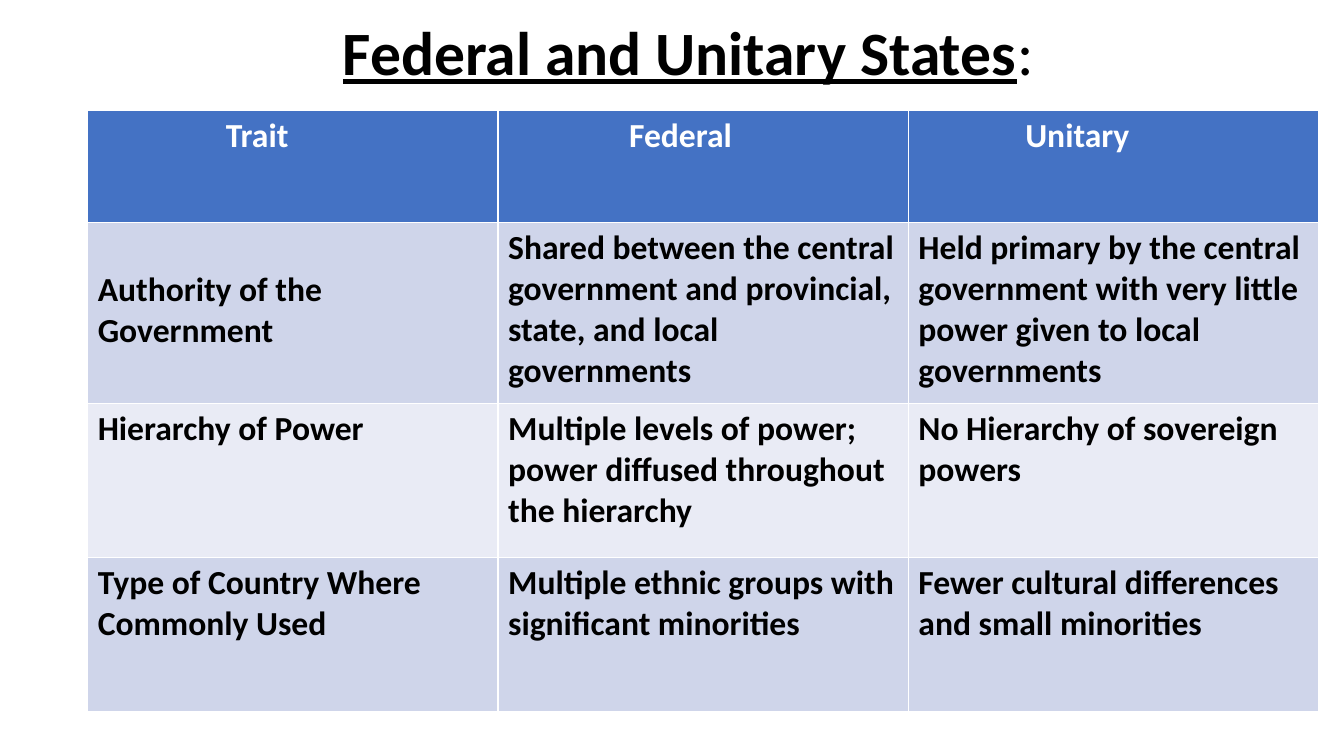
from lxml import etree
from pptx import Presentation
from pptx.dml.color import RGBColor
from pptx.enum.text import MSO_ANCHOR, PP_ALIGN
from pptx.oxml.ns import qn
from pptx.util import Inches, Pt

MIDDLE = MSO_ANCHOR.MIDDLE
LEFT = PP_ALIGN.LEFT

SLIDE_WIDTH, SLIDE_HEIGHT = 13.33, 7.5
FONT = "Calibri"
COLORS = {
    "text": "000000",
    "header_text": "FFFFFF",
    "header": "4472C4",
    "band_dark": "CFD5EA",
    "band_light": "E9EBF5",
    "border": "FFFFFF",
}

# Table grid, in inches
TABLE_LEFT, TABLE_TOP = 0.87, 1.1
COLUMN_WIDTH = 4.07
ROW_HEIGHTS = [1.11, 1.79, 1.53, 1.53]
CELL_MARGIN = 0.1
HEADER_INDENTS = [1.27, 1.2, 1.06]
AUTHORITY_TOP_MARGIN = 0.46

ROWS = [
    ["Trait", "Federal", "Unitary"],
    ["Authority of the Government",
     "Shared between the central government and provincial, state, and local governments",
     "Held primary by the central government with very little power given to local governments"],
    ["Hierarchy of Power",
     "Multiple levels of power; power diffused throughout the hierarchy",
     "No Hierarchy of sovereign powers"],
    ["Type of Country Where Commonly Used",
     "Multiple ethnic groups with significant minorities",
     "Fewer cultural differences and small minorities"],
]


def add_run(paragraph, text, color, **formats):
    run = paragraph.add_run()
    run.text = text
    run.font.name = FONT
    run.font.color.rgb = RGBColor.from_string(COLORS[color])
    for name, value in formats.items():
        setattr(run.font, name, value)


def add_title(slide):
    shape = slide.shapes.add_textbox(
        Inches(1.5), 0, Inches(10.5), Inches(TABLE_TOP))
    frame = shape.text_frame
    frame.word_wrap = True
    frame.vertical_anchor = MIDDLE
    frame.margin_left = Inches(1.9)
    paragraph = frame.paragraphs[0]
    paragraph.alignment = LEFT
    paragraph.line_spacing = 0.9
    add_run(paragraph, "Federal and Unitary States", "text",
            size=Pt(44), bold=True, underline=True)
    add_run(paragraph, ":", "text", size=Pt(44), bold=False, underline=False)


def set_borders(cell):
    properties = cell._tc.get_or_add_tcPr()
    for side in ("lnL", "lnR", "lnT", "lnB"):
        line = etree.SubElement(properties, qn(f"a:{side}"), w=str(Pt(1)))
        fill = etree.SubElement(line, qn("a:solidFill"))
        etree.SubElement(fill, qn("a:srgbClr"), val=COLORS["border"])


def fill_cell(cell, text, fill, color):
    set_borders(cell)
    cell.fill.solid()
    cell.fill.fore_color.rgb = RGBColor.from_string(COLORS[fill])
    add_run(cell.text_frame.paragraphs[0], text, color,
            size=Pt(24), bold=True)


def add_comparison_table(slide):
    column_count = len(ROWS[0])
    table = slide.shapes.add_table(
        len(ROWS), column_count, Inches(TABLE_LEFT), Inches(TABLE_TOP),
        Inches(COLUMN_WIDTH * column_count), Inches(sum(ROW_HEIGHTS))).table
    for column in table.columns:
        column.width = Inches(COLUMN_WIDTH)

    for row_index, texts in enumerate(ROWS):
        table.rows[row_index].height = Inches(ROW_HEIGHTS[row_index])
        if row_index == 0:
            fill, color = "header", "header_text"
        else:
            fill, color = ("band_dark" if row_index % 2 else "band_light"), "text"
        for column_index, text in enumerate(texts):
            fill_cell(table.cell(row_index, column_index), text, fill, color)

    # Indented headings and the lowered first label
    for column_index, indent in enumerate(HEADER_INDENTS):
        table.cell(0, column_index).margin_left = Inches(CELL_MARGIN + indent)
    table.cell(1, 0).margin_top = Inches(AUTHORITY_TOP_MARGIN)


def main():
    presentation = Presentation()
    presentation.slide_width = Inches(SLIDE_WIDTH)
    presentation.slide_height = Inches(SLIDE_HEIGHT)
    slide = presentation.slides.add_slide(presentation.slide_layouts[6])
    add_title(slide)
    add_comparison_table(slide)
    presentation.save("out.pptx")


if __name__ == "__main__":
    main()
